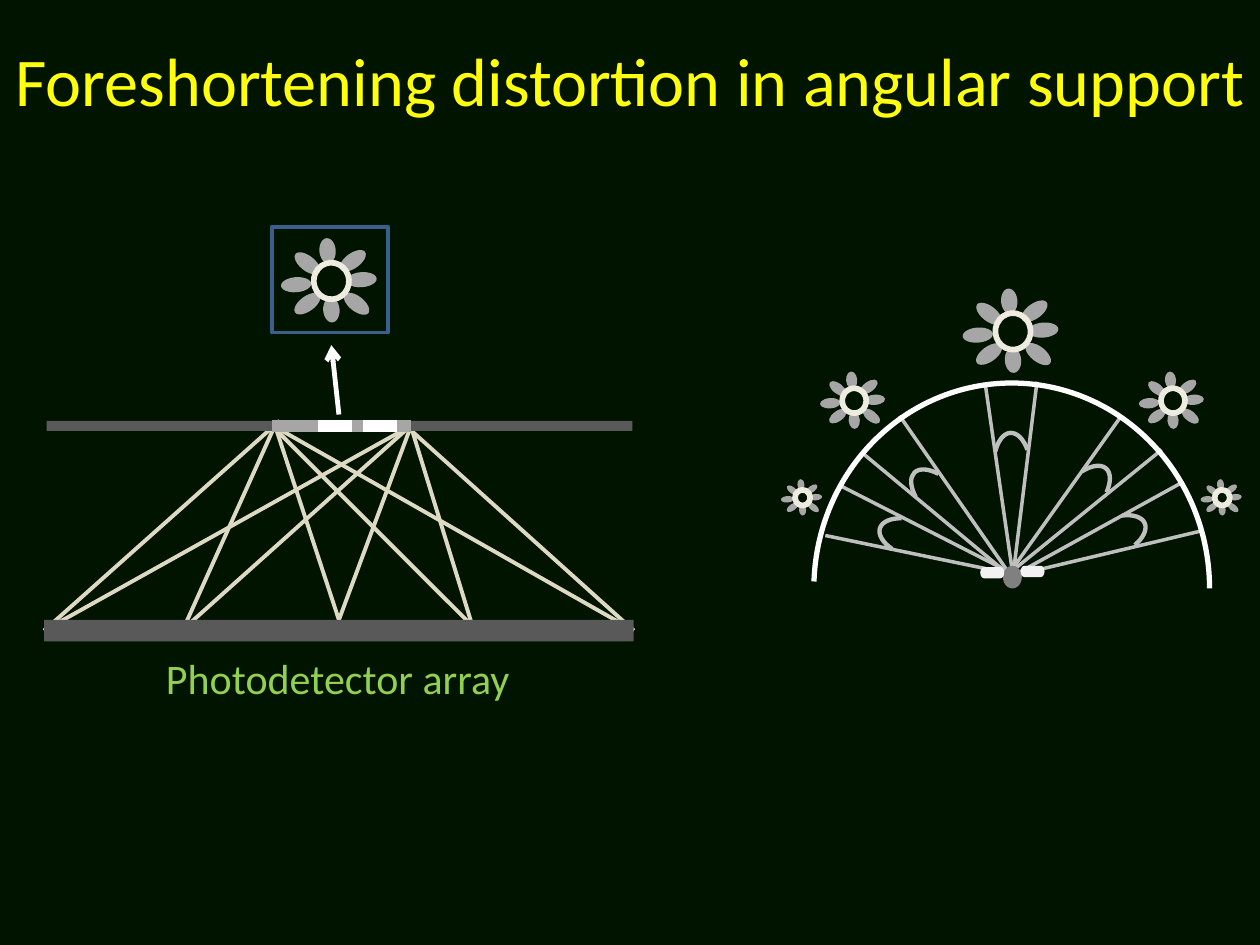
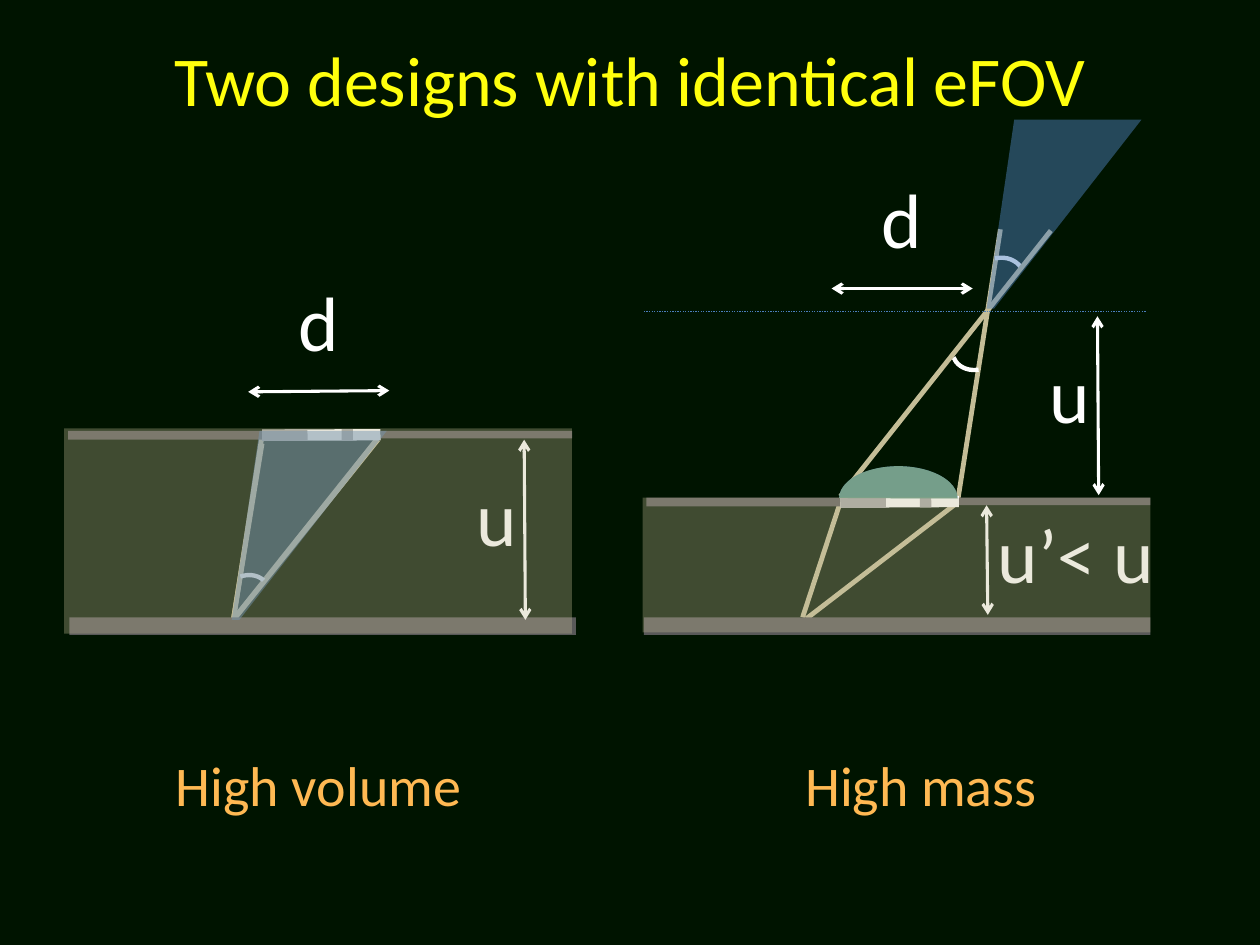
from dataclasses import dataclass

import pptx
import pptx.dml.color
import pptx.enum.dml
import pptx.enum.shapes
import pptx.enum.text
import pptx.oxml.ns
import pptx.util
from lxml import etree

Inches = pptx.util.Inches
KIND = pptx.enum.shapes.MSO_SHAPE
DASH = pptx.enum.dml.MSO_LINE
ALIGN = pptx.enum.text.PP_ALIGN
ANCHOR = pptx.enum.text.MSO_ANCHOR
qn = pptx.oxml.ns.qn


@dataclass(frozen=True)
class Theme:
    font: str = "Calibri"
    back: str = "001400"
    title: str = "FFFF0D"
    label: str = "92D050"
    note: str = "FFB953"
    white: str = "FFFFFF"
    bar: str = "595959"
    petal: str = "A6A6A6"
    ring: str = "EEECE1"
    frame: str = "3A5F8C"
    ray: str = "DDD9C3"
    sand: str = "C4BD97"
    fan: str = "BFBFBF"
    hub: str = "808080"
    wing: str = "F2F2F2"
    blue: str = "4F81BD"
    dots: str = "4B7EBC"
    green: str = "9BBB59"
    head: int = 40
    mark: int = 44
    foot: int = 32
    small: int = 24


T = Theme()
BOTH = ("headEnd", "tailEnd")

# Petals of a full-size flower: offset from its centre, size, turn
PETALS = [
    (0, 0.23, 0.13, 0.2, 355.7), (-0.03, -0.24, 0.13, 0.2, 355.7),
    (0.24, -0.01, 0.24, 0.12, 355.7), (-0.28, 0.03, 0.24, 0.12, 355.7),
    (0.17, -0.16, 0.24, 0.12, 324.1), (-0.19, 0.18, 0.24, 0.12, 324.1),
    (-0.19, -0.14, 0.24, 0.12, 218.2), (0.2, 0.18, 0.24, 0.12, 218.2),
]


def rgb(hue):
    return pptx.dml.color.RGBColor.from_string(hue)


def paint(item, fill=None, line=None, width=1, alpha=None):
    """Set fill, outline and opacity (in percent), and drop the shadow."""
    item.shadow.inherit = False
    if fill:
        item.fill.solid()
        item.fill.fore_color.rgb = rgb(fill)
        if alpha:
            tone = item.fill._xPr.find(".//" + qn("a:srgbClr"))
            etree.SubElement(tone, qn("a:alpha")).set("val", str(alpha * 1000))
    else:
        item.fill.background()
    if line:
        item.line.color.rgb = rgb(line)
        item.line.width = pptx.util.Pt(width)
    else:
        item.line.fill.background()


def shape(shapes, kind, box, turn=0, adj=(), **look):
    item = shapes.add_shape(kind, *map(Inches, box))
    item.rotation = turn
    for i, val in enumerate(adj):
        item.adjustments[i] = val
    paint(item, **look)
    return item


def line(shapes, start, end, hue, width, dash=None, ends=()):
    item = shapes.add_connector(pptx.enum.shapes.MSO_CONNECTOR.STRAIGHT,
                                *map(Inches, (*start, *end)))
    item.line.color.rgb = rgb(hue)
    item.line.width = pptx.util.Pt(width)
    if dash:
        item.line.dash_style = dash
    for tip in ends:
        etree.SubElement(item.line._ln, qn("a:" + tip)).set("type", "arrow")
    etree.SubElement(item._element.spPr, qn("a:effectLst"))
    return item


def text(shapes, box, words, size, hue, align=ALIGN.LEFT, anchor=ANCHOR.TOP):
    frame = shapes.add_textbox(*map(Inches, box)).text_frame
    frame.word_wrap = True
    frame.vertical_anchor = anchor
    para = frame.paragraphs[0]
    para.alignment = align
    run = para.add_run()
    run.text = words
    run.font.name = T.font
    run.font.size = pptx.util.Pt(size)
    run.font.color.rgb = rgb(hue)


def page(deck, title, size=T.head):
    slide = deck.slides.add_slide(deck.slide_layouts[6])
    slide.background.fill.solid()
    slide.background.fill.fore_color.rgb = rgb(T.back)
    text(slide.shapes, (0, 0, 10, 1.25), title, size, T.title,
         ALIGN.CENTER, ANCHOR.MIDDLE)
    return slide.shapes


def flower(shapes, x, y, scale=1):
    group = shapes.add_group_shape().shapes
    for dx, dy, w, h, turn in PETALS:
        box = (x + (dx - w / 2) * scale, y + (dy - h / 2) * scale,
               w * scale, h * scale)
        shape(group, KIND.OVAL, box, turn, fill=T.petal)
    w, h = 0.28 * scale, 0.29 * scale
    shape(group, KIND.OVAL, (x - w / 2, y - h / 2, w, h), 355.7,
          line=T.ring, width=3.25)


def fan(shapes, x, y, turn, apex, tips):
    """A pair of rays from the apex, with an angle arc at x, y."""
    group = shapes.add_group_shape().shapes
    shape(group, KIND.ARC, (x, y, 0.59, 0.3), turn, (191.997, 23.796),
          line=T.fan, width=2.5)
    for tip in tips:
        line(group, tip, apex, T.fan, 2)


def mask(shapes, left, right):
    """Two bars joined by a coded white and grey aperture."""
    bars = [shape(shapes, KIND.RECTANGLE, box, fill=T.bar)
            for box in (left, right)]
    for hue, dash in ((T.white, None), (T.petal, DASH.DASH_DOT)):
        strip = line(shapes, (left[0] + left[2], left[1]), right[:2],
                     hue, 6.5, dash)
        strip.begin_connect(bars[0], 3)
        strip.end_connect(bars[1], 1)
    return bars


def angle(shapes, x, y, turn, adj):
    shape(shapes, KIND.ARC, (x, y, 0.47, 0.38), turn, adj,
          line=T.white, width=2.5)


def span(shapes, start, end, words, box):
    """A double arrow with its letter."""
    line(shapes, start, end, T.white, 1.75, ends=BOTH)
    text(shapes, box, words, T.mark, T.white)


def cone(shapes, x, y):
    """Tapered field of view whose top left bounding corner is x, y."""
    spots = [(Inches(x + dx), Inches(y + dy)) for dx, dy in
             ((0, 1.5), (0.22, 0), (1.23, 0), (0.06, 1.5))]
    build = shapes.build_freeform(*spots[0])
    build.add_line_segments(spots[1:], close=True)
    paint(build.convert_to_shape(), fill=T.blue, alpha=48)


def support(deck):
    shapes = page(deck, "Foreshortening distortion in angular support", 39)

    # Framed flower above the aperture
    line(shapes, (2.69, 3.29), (2.63, 2.74), T.white, 2.75, ends=["tailEnd"])
    flower(shapes, 2.63, 2.23)
    shape(shapes, KIND.RECTANGLE, (2.16, 1.8, 0.92, 0.84),
          line=T.frame, width=2)

    # Flowers around the dome
    for x, y, scale in ((9.7, 3.95, 0.43), (6.37, 3.95, 0.43),
                        (8.04, 2.63, 1), (9.31, 3.18, 0.68),
                        (6.78, 3.18, 0.68)):
        flower(shapes, x, y, scale)

    # Rays from both aperture edges to the detector
    text(shapes, (1.02, 5.13, 3.32, 0.5), "Photodetector array",
         T.small, T.label, ALIGN.CENTER)
    routes = [
        ((2.22, 3.34), (0.35, 5.01), 1), ((3.26, 3.38), (0.35, 5.01), 1),
        ((2.18, 3.37), (2.69, 4.92), 0), ((3.27, 3.36), (2.69, 4.92), 0),
        ((2.17, 3.38), (5.03, 5.01), 3), ((3.2, 3.36), (5.03, 5.01), 3),
        ((2.19, 3.36), (1.46, 4.98), None), ((3.28, 3.36), (1.47, 4.98), None),
        ((2.17, 3.39), (3.76, 4.98), None), ((3.26, 3.39), (3.75, 4.97), None),
    ]
    rays = [line(shapes, start, end, T.ray, 2.25) for start, end, _ in routes]
    plate = shape(shapes, KIND.RECTANGLE, (0.35, 4.92, 4.68, 0.17), fill=T.bar)
    for ray, (_, _, side) in zip(rays, routes):
        if side is not None:
            ray.end_connect(plate, side)
    _, right = mask(shapes, (0.37, 3.34, 1.79, 0.08), (3.26, 3.34, 1.76, 0.08))
    for i in (1, 9):
        rays[i].begin_connect(right, 1)

    # Angular fans under the dome
    for x, y, turn, apex, tips in (
            (6.97, 4.13, 197.3, (8.05, 4.56), ((6.66, 3.85), (6.55, 4.25))),
            (7.17, 3.81, 225.2, (8.03, 4.58), ((7.14, 3.3), (6.85, 3.6))),
            (7.74, 3.58, 267.1, (8.04, 4.57), ((8.23, 3.03), (7.82, 3.05))),
            (8.29, 3.79, 310.9, (8.01, 4.55), ((9.22, 3.57), (8.9, 3.3))),
            (8.52, 4.12, 336.6, (8.04, 4.57), ((9.55, 4.21), (9.38, 3.83)))):
        fan(shapes, x, y, turn, apex, tips)
    shape(shapes, KIND.ARC, (6.46, 3.04, 3.14, 3.26), adj=(109.195, 0),
          line=T.white, width=3)

    # Winged sensor at the apex
    group = shapes.add_group_shape().shapes
    shape(group, KIND.FLOWCHART_CONNECTOR, (7.96, 4.49, 0.15, 0.18),
          fill=T.hub)
    for x, y in ((7.78, 4.5), (8.1, 4.49)):
        shape(group, KIND.FLOWCHART_TERMINATOR, (x, y, 0.19, 0.09),
              fill=T.wing)


def designs(deck):
    shapes = page(deck, "Two designs with identical eFOV")

    # Rays and view angles
    routes = [
        ((3.02, 3.46), (1.84, 4.93)), ((7.6, 3.98), (7.94, 1.82)),
        ((3, 3.49), (1.83, 4.95)), ((2.08, 3.52), (1.84, 4.99)),
        ((6.4, 4.91), (7.61, 3.99)), ((6.37, 4.9), (6.67, 3.99)),
        ((2.08, 3.46), (1.84, 5)),
    ]
    rays = [line(shapes, start, end, T.sand, 2.75) for start, end in routes]
    angle(shapes, 7.67, 2.06, 327.1, (180.512, 0.418))
    angle(shapes, 7.54, 2.54, 143.6, (185.312, 5.691))
    angle(shapes, 1.7, 4.59, 311.7, (186.62, 0.237))

    # Apertures and detectors
    for x, y, dx in ((5.13, 3.95, 5.11), (0.54, 3.42, 0.55)):
        bars = mask(shapes, (x, y, 1.54, 0.07), (x + 2.48, y, 1.52, 0.06))
        if x > 5:
            rays[4].end_connect(bars[1], 1)
            rays[5].end_connect(bars[0], 3)
        else:
            rays[0].begin_connect(bars[1], 1)
            rays[6].begin_connect(bars[0], 3)
        shape(shapes, KIND.RECTANGLE, (dx, 4.9, 4.02, 0.14), fill=T.bar)
    line(shapes, (6.67, 3.94), (8.34, 1.83), T.sand, 2.75)

    # Heights, lens and captions
    span(shapes, (7.83, 4.01), (7.84, 4.88), "u’< u", (7.82, 3.97, 1.58, 0.84))
    span(shapes, (8.71, 2.51), (8.72, 3.93), "u", (8.23, 2.7, 0.63, 0.84))
    lens = (6.66, 3.7, 0.94, 0.51)
    half = (108.199, 215.99)
    shape(shapes, KIND.PIE, lens, adj=half, fill=T.blue)
    for x, words in ((0.51, "High volume"), (5.29, "High mass")):
        text(shapes, (x, 5.9, 4.04, 0.64), words, T.foot, T.note,
             ALIGN.CENTER, ANCHOR.MIDDLE)

    # Fields of view and tinted volumes
    cone(shapes, 1.84, 3.42)
    cone(shapes, 7.83, 0.95)
    line(shapes, (5.11, 2.47), (9.1, 2.47), T.dots, 0.75, DASH.ROUND_DOT)
    span(shapes, (4.16, 3.49), (4.17, 4.92), "u", (3.68, 3.68, 0.63, 0.84))
    for box in ((0.51, 3.4, 4.03, 1.63), (5.1, 3.95, 4.03, 1.07)):
        shape(shapes, KIND.RECTANGLE, box, fill=T.sand, alpha=33)
    shape(shapes, KIND.PIE, lens, adj=half, fill=T.green, alpha=51)

    # Aperture widths
    span(shapes, (1.97, 3.11), (3.09, 3.1), "d", (2.27, 2.13, 0.63, 0.84))
    span(shapes, (6.6, 2.29), (7.72, 2.29), "d", (6.9, 1.31, 0.63, 0.84))


def main():
    deck = pptx.Presentation()
    deck.slide_width, deck.slide_height = Inches(10), Inches(7.5)
    support(deck)
    designs(deck)
    deck.save("out.pptx")


if __name__ == "__main__":
    main()
